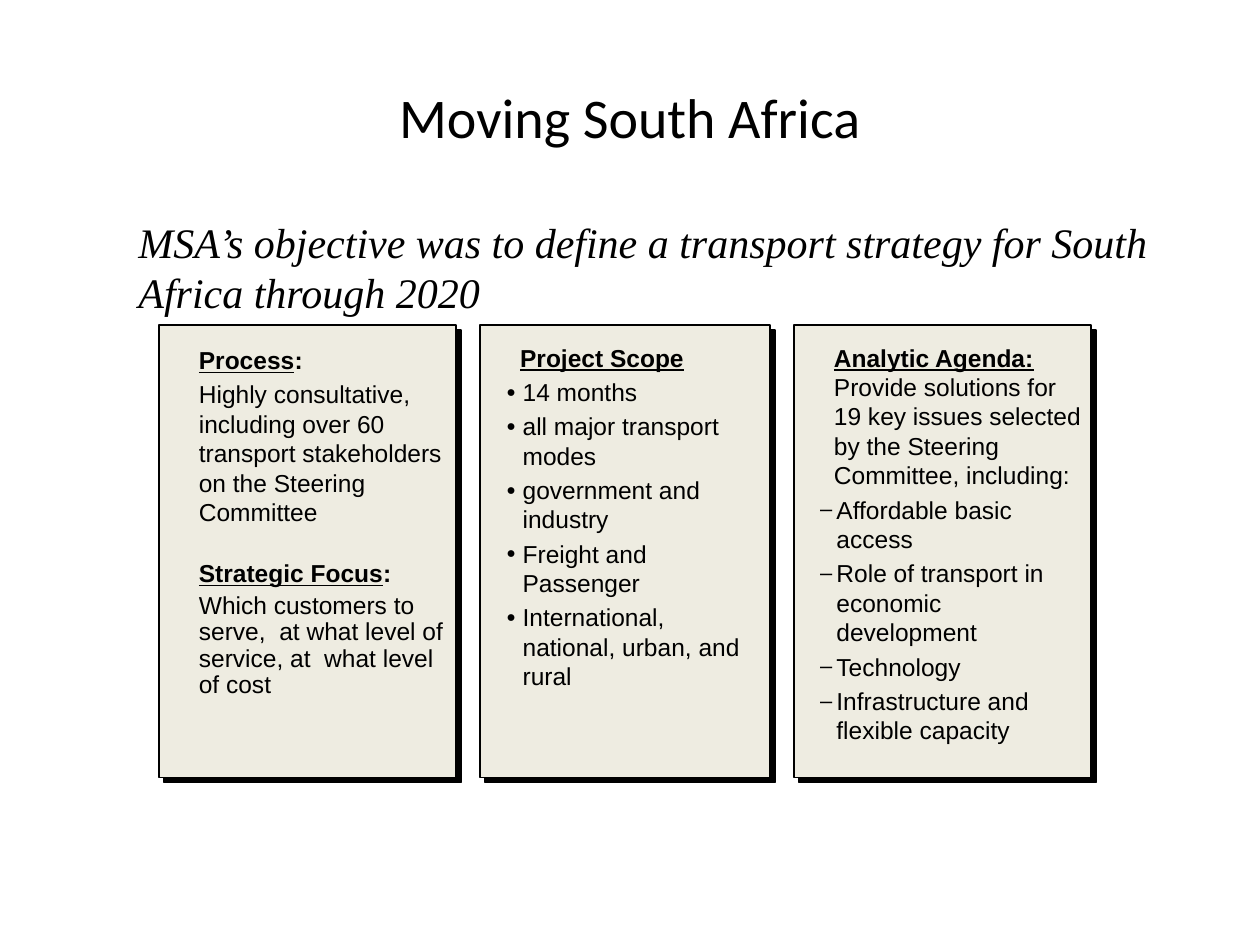
from lxml.etree import SubElement as Sub
from pptx import Presentation
from pptx.dml.color import RGBColor as RGB
from pptx.enum.shapes import MSO_SHAPE as Shape
from pptx.enum.text import MSO_ANCHOR as Anchor, MSO_AUTO_SIZE as Auto, PP_ALIGN as Align
from pptx.oxml.ns import qn
from pptx.util import Inches, Pt

# Grid of 100 columns by 75 rows
COLS, ROWS = 100, 75
INK, CREAM = "000000", "EEECE1"
HEAD = dict(bold=True, underline=True)
PLAIN = dict(bold=False, underline=False)
COLON = dict(bold=True, underline=False)

# Bullet style: character and size in percent
DOT, DASH = ("●", 64), ("–", 89)


def para(*runs, mark=None, gap=2.8, line=None):
    return dict(runs=runs, mark=mark, gap=gap, line=line)


def items(mark, *lines):
    return [para((line, PLAIN), mark=mark) for line in lines]


PROCESS = [
    para(("Process", HEAD), (":", COLON)),
    para(("Highly consultative, including over 60 transport stakeholders "
          "on the Steering Committee", PLAIN)),
    para(("Strategic Focus", HEAD), (":", COLON), gap=20, line=0.9),
    para(("Which customers to serve,  at what level of service, at  what level "
          "of cost", PLAIN), line=0.9),
]
SCOPE = [para(("Project Scope", HEAD))] + items(
    DOT, "14 months", "all major transport modes", "government and industry",
    "Freight and Passenger", "International, national, urban, and rural")
AGENDA = [para(("Analytic Agenda: ", HEAD),
               ("Provide solutions for 19 key issues selected by the Steering "
                "Committee, including:", PLAIN))] + items(
    DASH, "Affordable basic access", "Role of transport in economic development",
    "Technology", "Infrastructure and flexible capacity")

# Left column, width, text drop and text height of each panel
PANELS = [
    (12.6, 23.6, 1.1, 27.1, PROCESS),
    (38.1, 23, 0.9, 29.3, SCOPE),
    (63, 23.6, 0.9, 33.5, AGENDA),
]


def color(code):
    return RGB.from_string(code)


def place(deck, left, top, wide, high):
    col, row = deck.slide_width / COLS, deck.slide_height / ROWS
    return [round(n) for n in (left * col, top * row, wide * col, high * row)]


def style(run, **look):
    for name, value in look.items():
        setattr(run.font, name, value)
    run.font.color.rgb = color(INK)


def text_box(slide, box):
    frame = slide.shapes.add_textbox(*box).text_frame
    frame.word_wrap = True
    return frame


def indent(item, mark):
    props = item._p.get_or_add_pPr()
    if not mark:
        props.set("marL", str(Inches(0.23)))
        return
    char, size = mark
    props.set("marL", str(Inches(0.25)))
    props.set("indent", str(Inches(-0.13)))
    Sub(props, qn("a:buSzPct"), val=str(size * 1000))
    Sub(props, qn("a:buFont"), typeface="Arial")
    Sub(props, qn("a:buChar"), char=char)


def heading(slide, box):
    frame = text_box(slide, box)
    frame.vertical_anchor = Anchor.MIDDLE
    item = frame.paragraphs[0]
    item.alignment = Align.CENTER
    run = item.add_run()
    run.text = "Moving South Africa"
    style(run, name="Calibri", size=Pt(32))


def goal(slide, box):
    frame = text_box(slide, box)
    frame.auto_size = Auto.SHAPE_TO_FIT_TEXT
    run = frame.paragraphs[0].add_run()
    run.text = ("MSA’s objective was to define a transport strategy for South "
                "Africa through 2020")
    style(run, name="Times New Roman", size=Pt(24), italic=True)


def card(slide, box):
    shape = slide.shapes.add_shape(Shape.RECTANGLE, *box)
    shape.fill.solid()
    shape.fill.fore_color.rgb = color(CREAM)
    shape.line.color.rgb = color(INK)
    shape.line.width = Pt(1)
    # Hard shadow, down and to the right
    shape.shadow.inherit = False
    effects = shape._element.spPr.find(qn("a:effectLst"))
    shadow = Sub(effects, qn("a:outerShdw"), dist=str(Pt(4.2)),
                 dir=str(45 * 60000), algn="ctr", rotWithShape="0")
    Sub(shadow, qn("a:srgbClr"), val=INK)


def panel(slide, box, drop, high, parts):
    card(slide, box)
    left, top, wide, _ = box
    edge = Inches(0.01)
    frame = text_box(slide, (left - edge, top + drop, wide + 3 * edge, high))
    frame.auto_size = Auto.SHAPE_TO_FIT_TEXT
    for n, part in enumerate(parts):
        item = frame.add_paragraph() if n else frame.paragraphs[0]
        indent(item, part["mark"])
        if n:
            item.space_before = Pt(part["gap"])
        if part["line"]:
            item.line_spacing = part["line"]
        for words, look in part["runs"]:
            run = item.add_run()
            run.text = words
            style(run, name="Arial", size=Pt(14), **look)


def main():
    deck = Presentation()
    deck.slide_width, deck.slide_height = Inches(10), Inches(7.5)
    slide = deck.slides.add_slide(deck.slide_layouts[6])
    heading(slide, place(deck, 5, 3, 90, 12.5))
    for left, wide, drop, high, parts in PANELS:
        box = place(deck, left, 25.8, wide, 35.9)
        _, drop, _, high = place(deck, 0, drop, 0, high)
        panel(slide, box, drop, high, parts)
    goal(slide, place(deck, 10, 16.7, 84.2, 9))
    deck.save("out.pptx")


if __name__ == "__main__":
    main()
